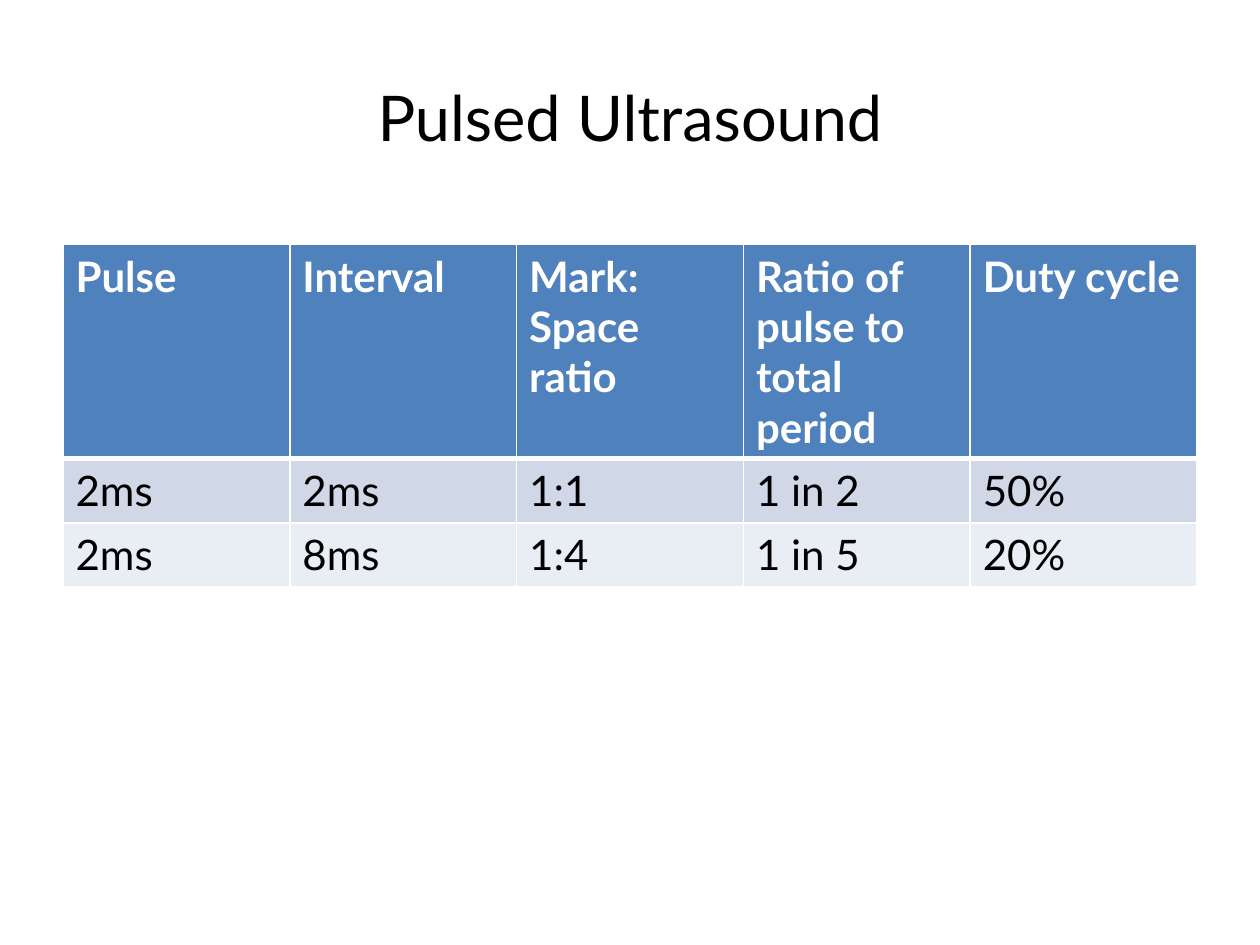
import pptx
import pptx.dml.color
import pptx.enum.text
import pptx.oxml.ns
import pptx.util
from lxml import etree

Inches = pptx.util.Inches
Pt = pptx.util.Pt
RGBColor = pptx.dml.color.RGBColor

TITLE = "Pulsed Ultrasound"
HEADERS = ["Pulse", "Interval", "Mark: Space ratio", "Ratio of pulse to total period", "Duty cycle"]
ROWS = [
    ["2ms", "2ms", "1:1", "1 in 2", "50%"],
    ["2ms", "8ms", "1:4", "1 in 5", "20%"],
]

THEME = {
    "font": "Lato",
    "title_size": 36,
    "table_size": 24,
    "text": "000000",
    "header_text": "FFFFFF",
    "header_fill": "4F81BD",
    "bands": ["D0D8E8", "E9EDF4"],
    "border": "FFFFFF",
    "border_width": 1,
    "header_rule_width": 3,
}
TABLE_LEFT, TABLE_TOP, TABLE_WIDTH = 0.5, 1.94, 9
HEADER_HEIGHT, ROW_HEIGHT = 1.7, 0.51


def style_paragraph(paragraph, size, color, bold=False):
    paragraph.font.name = THEME["font"]
    paragraph.font.size = Pt(size)
    paragraph.font.bold = bold
    paragraph.font.color.rgb = RGBColor.from_string(color)


def add_borders(cell, top, bottom):
    properties = cell._tc.get_or_add_tcPr()
    side = THEME["border_width"]
    for tag, width in (("a:lnL", side), ("a:lnR", side), ("a:lnT", top), ("a:lnB", bottom)):
        line = etree.SubElement(properties, pptx.oxml.ns.qn(tag), w=str(Pt(width)))
        fill = etree.SubElement(line, pptx.oxml.ns.qn("a:solidFill"))
        etree.SubElement(fill, pptx.oxml.ns.qn("a:srgbClr"), val=THEME["border"])


def add_title(slide):
    title = slide.shapes.title
    title.left, title.top = Inches(0.5), Inches(0.3)
    title.width, title.height = Inches(9), Inches(1.25)
    title.text_frame.text = TITLE
    title.text_frame.vertical_anchor = pptx.enum.text.MSO_ANCHOR.MIDDLE
    paragraph = title.text_frame.paragraphs[0]
    paragraph.alignment = pptx.enum.text.PP_ALIGN.CENTER
    style_paragraph(paragraph, THEME["title_size"], THEME["text"])


def add_pulse_table(slide):
    content = [HEADERS] + ROWS
    heights = [HEADER_HEIGHT] + [ROW_HEIGHT] * len(ROWS)
    table = slide.shapes.add_table(
        len(content), len(HEADERS), Inches(TABLE_LEFT), Inches(TABLE_TOP),
        Inches(TABLE_WIDTH), Inches(sum(heights)),
    ).table
    for column in table.columns:
        column.width = Inches(TABLE_WIDTH / len(HEADERS))
    thin, thick = THEME["border_width"], THEME["header_rule_width"]
    for row_index, (values, height) in enumerate(zip(content, heights)):
        table.rows[row_index].height = Inches(height)
        is_header = row_index == 0
        fill = THEME["header_fill"] if is_header else THEME["bands"][(row_index - 1) % 2]
        color = THEME["header_text"] if is_header else THEME["text"]
        top = thick if row_index == 1 else thin
        bottom = thick if is_header else thin
        for column_index, value in enumerate(values):
            cell = table.cell(row_index, column_index)
            cell.text = value
            add_borders(cell, top, bottom)
            cell.fill.solid()
            cell.fill.fore_color.rgb = RGBColor.from_string(fill)
            style_paragraph(cell.text_frame.paragraphs[0], THEME["table_size"], color, is_header)


def main():
    presentation = pptx.Presentation()
    presentation.slide_width, presentation.slide_height = Inches(10), Inches(7.5)
    slide = presentation.slides.add_slide(presentation.slide_layouts[5])
    add_title(slide)
    add_pulse_table(slide)
    presentation.save("out.pptx")


if __name__ == "__main__":
    main()
